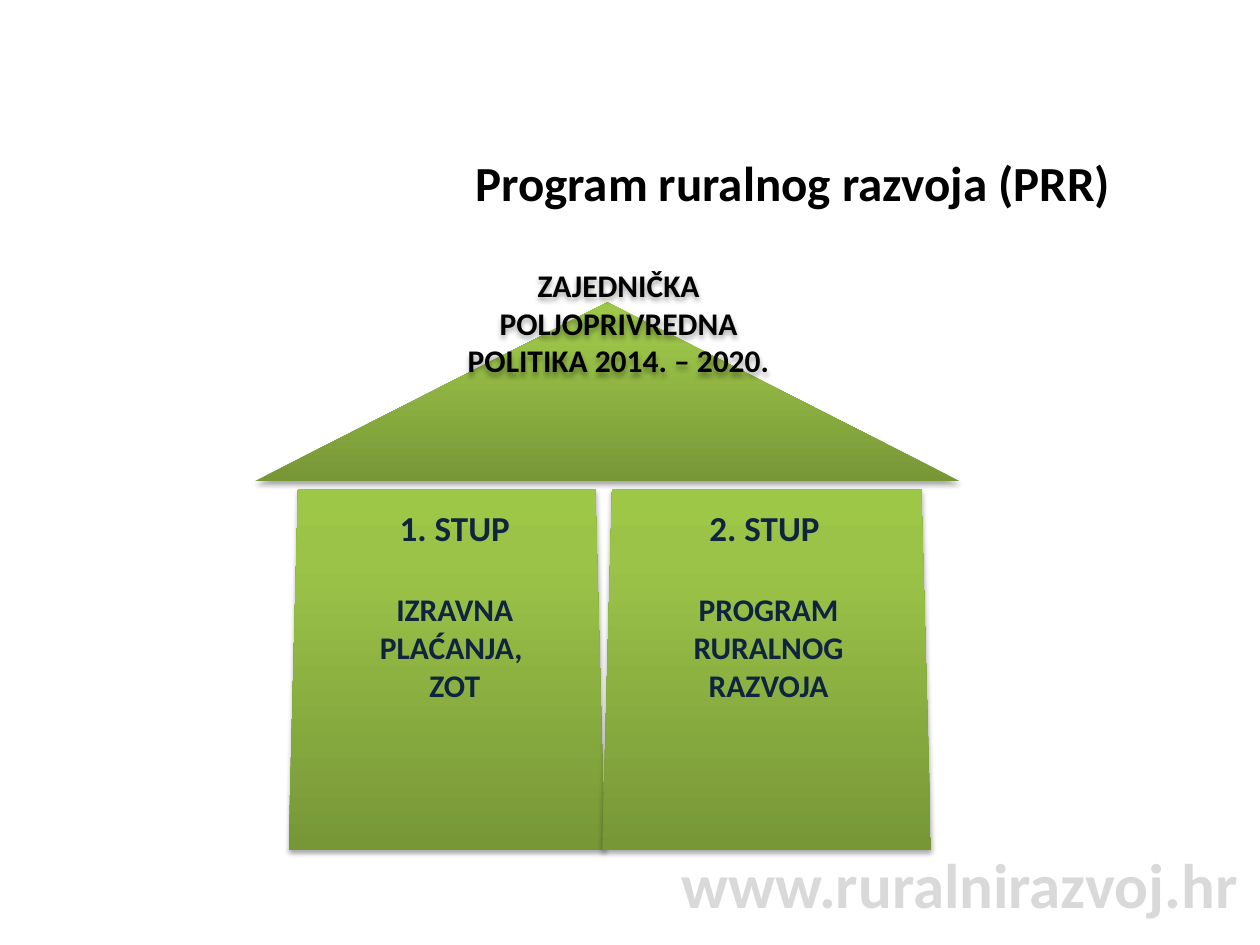
import copy

import pptx
import pptx.dml.color
import pptx.enum.shapes
import pptx.enum.text
import pptx.oxml
import pptx.oxml.ns
import pptx.util

RGBColor = pptx.dml.color.RGBColor
SHAPE = pptx.enum.shapes.MSO_SHAPE
ALIGN = pptx.enum.text.PP_ALIGN
ANCHOR = pptx.enum.text.MSO_ANCHOR
qn = pptx.oxml.ns.qn

BLACK = RGBColor(0x00, 0x00, 0x00)
NAVY = RGBColor(0x0F, 0x24, 0x3E)
GREY = RGBColor(0xD9, 0xD9, 0xD9)
GREENS = [
    (0, RGBColor(0x77, 0x97, 0x37)),
    (0.8, RGBColor(0x9B, 0xC3, 0x48)),
    (1, RGBColor(0x9D, 0xC7, 0x46)),
]
FONT = "Calibri"
COLUMNS, ROWS = 100, 75
WIDTH, HEIGHT = pptx.util.Inches(10), pptx.util.Inches(7.5)


def place(box):
    x, y, w, h = box
    col, row = WIDTH / COLUMNS, HEIGHT / ROWS
    return int(x * col), int(y * row), int(w * col), int(h * row)


def within(box, x, y, w, h):
    return box[0] + x, box[1] + y, w, h


def add_run(p, text, size, color, align=ALIGN.CENTER):
    p.alignment = align
    r = p.add_run()
    r.text = text
    r.font.name = FONT
    r.font.size = pptx.util.Pt(size)
    r.font.bold = True
    r.font.color.rgb = color


def add_text(s, box, lines, color, wrap=True, align=ALIGN.CENTER):
    sp = s.shapes.add_textbox(*place(box))
    tf = sp.text_frame
    tf.word_wrap = wrap
    for i, (text, size, before) in enumerate(lines):
        p = tf.add_paragraph() if i else tf.paragraphs[0]
        if before:
            p.space_before = pptx.util.Pt(before)
        add_run(p, text, size, color, align)
    return sp


def add_shadow(sp):
    sp.shadow.inherit = False
    effects = sp._element.spPr.find(qn("a:effectLst"))
    effects.append(pptx.oxml.parse_xml(
        '<a:outerShdw xmlns:a="http://schemas.openxmlformats.org/drawingml/2006/main" '
        'blurRad="39370" dist="22860" dir="5400000" rotWithShape="0">'
        '<a:srgbClr val="000000"><a:alpha val="35000"/></a:srgbClr></a:outerShdw>'))


def add_green_shape(s, kind, box):
    sp = s.shapes.add_shape(kind, *place(box))
    sp.line.fill.background()
    sp.fill.gradient()
    sp.fill.gradient_angle = 90
    stops = sp._element.spPr.find(".//" + qn("a:gsLst"))
    stops.append(copy.deepcopy(stops[0]))
    for stop, (position, color) in zip(sp.fill.gradient_stops, GREENS):
        stop.position = position
        stop.color.rgb = color
    add_shadow(sp)
    return sp


def add_pillar(s, box):
    sp = add_green_shape(s, SHAPE.TRAPEZOID, box)
    sp.adjustments[0] = 0.03


def add_pillar_text(s, box, lines):
    add_text(s, within(box, 3.2, 0.9, 20, 16.8), lines, NAVY)


def add_roof(s, box):
    add_green_shape(s, SHAPE.ISOSCELES_TRIANGLE, within(box, 0.2, 4, 56, 14.2))
    label = add_text(s, within(box, 15.3, 0.6, 27.6, 10.1),
                     [("ZAJEDNIČKA POLJOPRIVREDNA POLITIKA 2014. – 2020.", 18, 0)], BLACK)
    add_shadow(label)


def add_house(s, box):
    pillars = [
        (within(box, 2.9, 18.8, 25.1, 28.7),
         [("1. STUP", 20, 0), ("IZRAVNA PLAĆANJA, ", 18, 24), ("ZOT", 18, 0)]),
        (within(box, 27.8, 18.8, 26.1, 28.7),
         [("2. STUP ", 20, 0), ("PROGRAM RURALNOG RAZVOJA", 18, 24)]),
    ]
    for pillar, _ in pillars:
        add_pillar(s, pillar)
    add_roof(s, box)
    for pillar, lines in pillars:
        add_pillar_text(s, pillar, lines)


def add_title(s, box):
    sp = s.shapes.title
    sp.left, sp.top, sp.width, sp.height = place(box)
    tf = sp.text_frame
    tf.vertical_anchor = ANCHOR.MIDDLE
    add_run(tf.paragraphs[0], "Program ruralnog razvoja (PRR)", 28, BLACK)


def add_address(s, box):
    add_text(s, box, [("www.ruralnirazvoj.hr", 36, 0)], GREY, wrap=False, align=ALIGN.LEFT)


def main():
    prs = pptx.Presentation()
    prs.slide_width, prs.slide_height = WIDTH, HEIGHT
    s = prs.slides.add_slide(prs.slide_layouts[5])
    add_address(s, (53.1, 66.6, 46.7, 7.1))
    add_title(s, (17.9, 8.2, 90, 12.5))
    add_house(s, (20, 20, 57, 48))
    prs.save("out.pptx")


if __name__ == "__main__":
    main()
